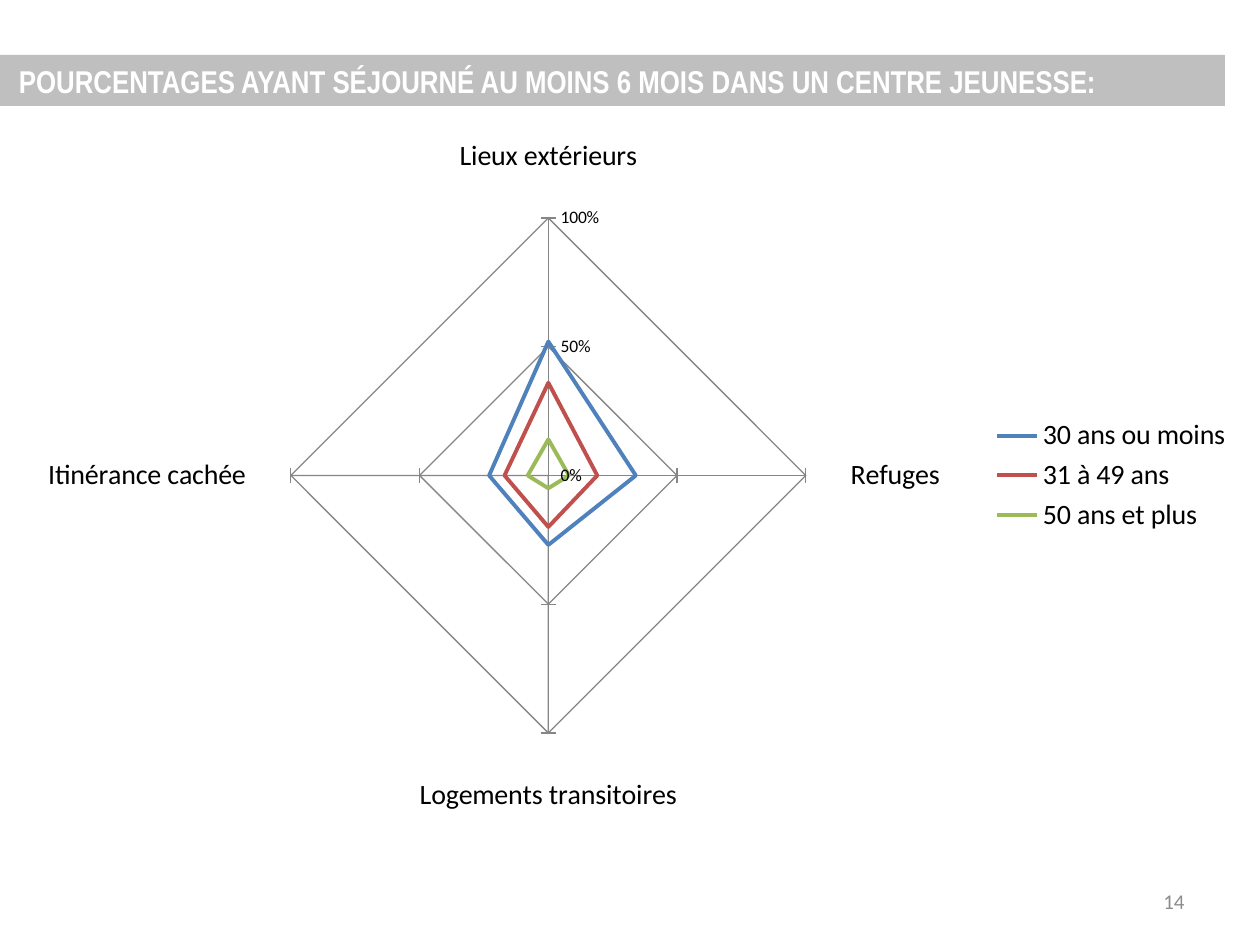
from pptx import Presentation
from pptx.chart.data import CategoryChartData
from pptx.dml.color import RGBColor
from pptx.enum.chart import XL_CHART_TYPE, XL_LEGEND_POSITION, XL_TICK_MARK
from pptx.enum.shapes import MSO_SHAPE
from pptx.enum.text import MSO_ANCHOR, PP_ALIGN
from pptx.util import Emu, Pt

PIXELS_PER_INCH = 126
WHITE = RGBColor(0xFF, 0xFF, 0xFF)
BLACK = RGBColor(0x00, 0x00, 0x00)
BANNER_GRAY = RGBColor(0xBF, 0xBF, 0xBF)
NUMBER_GRAY = RGBColor(0x8C, 0x8C, 0x8C)
GRID_GRAY = RGBColor(0x86, 0x86, 0x86)
BLUE = RGBColor(0x4F, 0x81, 0xBD)
RED = RGBColor(0xC0, 0x50, 0x4D)
GREEN = RGBColor(0x9B, 0xBB, 0x59)

PLACES = ["Lieux extérieurs", "Refuges", "Logements transitoires", "Itinérance cachée"]
AGE_GROUPS = [
    ("30 ans ou moins", (0.52, 0.34, 0.27, 0.23), BLUE),
    ("31 à 49 ans", (0.36, 0.19, 0.2, 0.17), RED),
    ("50 ans et plus", (0.14, 0.08, 0.05, 0.08), GREEN),
]


def px(length):
    """Turn pixels into EMU."""
    return Emu(round(length * 914400 / PIXELS_PER_INCH))


def set_font(font, name, size, color, bold=False):
    """Set the typeface, size, colour and weight of a font."""
    font.name = name
    font.size = Pt(size)
    font.color.rgb = color
    font.bold = bold


def add_banner(slide, text, left, top, width, height):
    """Add the gray title bar."""
    banner = slide.shapes.add_shape(
        MSO_SHAPE.RECTANGLE, px(left), px(top), px(width), px(height))
    banner.shadow.inherit = False
    banner.fill.solid()
    banner.fill.fore_color.rgb = BANNER_GRAY
    banner.line.fill.background()
    frame = banner.text_frame
    frame.word_wrap = True
    frame.margin_left = px(19)
    frame.vertical_anchor = MSO_ANCHOR.MIDDLE
    paragraph = frame.paragraphs[0]
    paragraph.text = text
    paragraph.alignment = PP_ALIGN.LEFT
    set_font(paragraph.font, "Arial Narrow", 18, WHITE, bold=True)


def add_page_number(slide, text, left, top, width, height):
    """Add the right-aligned page number."""
    box = slide.shapes.add_textbox(px(left), px(top), px(width), px(height))
    frame = box.text_frame
    frame.word_wrap = True
    frame.vertical_anchor = MSO_ANCHOR.MIDDLE
    paragraph = frame.paragraphs[0]
    paragraph.text = text
    paragraph.alignment = PP_ALIGN.RIGHT
    set_font(paragraph.font, "Calibri", 12, NUMBER_GRAY)


def style_axes(chart):
    """Set the scale, ticks, grid and labels of both axes."""
    for axis in (chart.category_axis, chart.value_axis):
        axis.has_major_gridlines = True
        for line in (axis.format.line, axis.major_gridlines.format.line):
            line.color.rgb = GRID_GRAY
            line.width = Pt(0.75)
    chart.category_axis.major_tick_mark = XL_TICK_MARK.OUTSIDE
    set_font(chart.category_axis.tick_labels.font, "Calibri", 16, BLACK)
    value_axis = chart.value_axis
    value_axis.minimum_scale = 0
    value_axis.maximum_scale = 1
    value_axis.major_unit = 0.5
    value_axis.major_tick_mark = XL_TICK_MARK.CROSS
    value_axis.tick_labels.number_format = "0%"
    value_axis.tick_labels.number_format_is_linked = False


def add_radar_chart(slide, left, top, width, height):
    """Add the radar chart of percentages by place and age group."""
    data = CategoryChartData(number_format="0%")
    data.categories = PLACES
    for name, values, _ in AGE_GROUPS:
        data.add_series(name, values)
    chart = slide.shapes.add_chart(
        XL_CHART_TYPE.RADAR, px(left), px(top), px(width), px(height), data).chart
    chart.has_title = False
    set_font(chart.font, "Calibri", 10, BLACK)
    style_axes(chart)
    plot = chart.plots[0]
    plot.vary_by_categories = False
    for series, (_, _, color) in zip(plot.series, AGE_GROUPS):
        series.format.line.color.rgb = color
        series.format.line.width = Pt(2.25)
    chart.has_legend = True
    chart.legend.position = XL_LEGEND_POSITION.RIGHT
    chart.legend.include_in_layout = False
    set_font(chart.legend.font, "Calibri", 16, BLACK)


def main():
    """Build and save the slide."""
    presentation = Presentation()
    presentation.slide_width = px(1260)
    presentation.slide_height = px(945)
    slide = presentation.slides.add_slide(presentation.slide_layouts[6])
    add_page_number(slide, "14", 903, 876, 294, 50)
    add_banner(
        slide, "POURCENTAGES AYANT SÉJOURNÉ AU MOINS 6 MOIS DANS UN CENTRE JEUNESSE:",
        0, 55, 1225, 51)
    add_radar_chart(slide, 0, 125, 1245, 701)
    presentation.save("out.pptx")


if __name__ == "__main__":
    main()
